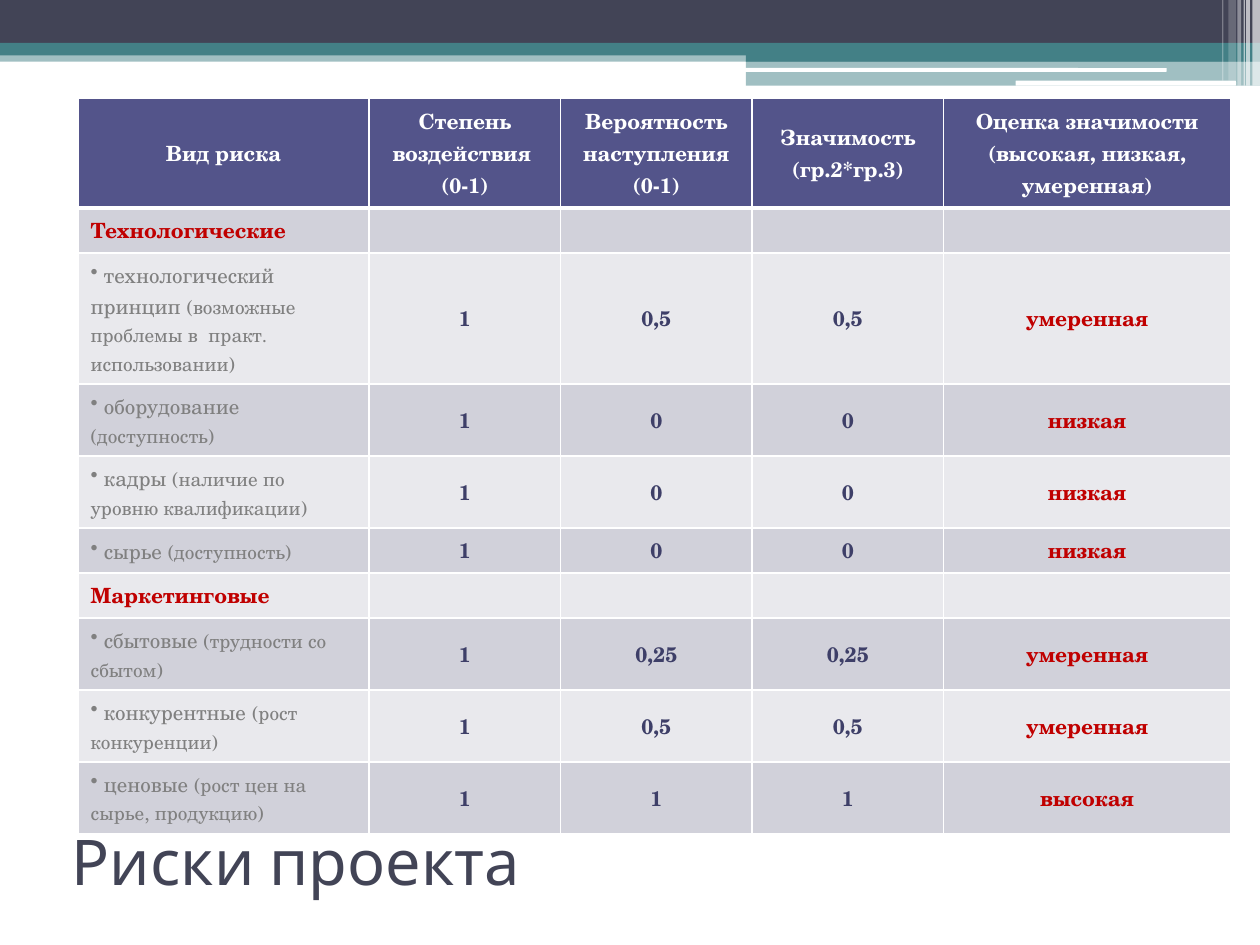
from lxml.etree import SubElement
from pptx import Presentation
from pptx.dml.color import RGBColor as Color
from pptx.enum.shapes import MSO_SHAPE as Preset
from pptx.enum.text import MSO_ANCHOR as Anchor, PP_ALIGN as Align
from pptx.oxml import parse_xml
from pptx.oxml.ns import nsdecls, qn
from pptx.util import Inches, Pt

COLORS = {
    "dark": "424456", "teal": "438086", "white": "FFFFFF", "header": "53548A",
    "odd": "D1D1DA", "even": "E9E9ED", "red": "C00000", "gray": "808080", "number": "3E3F68",
}
TITLE_FONT, TABLE_FONT = "Karla", "TeX Gyre Schola"

BANDS = [
    (0, 0.4, 10, 0.09, "teal", 50),
    (0, 0, 10, 0.34, "dark", 100),
    (0, 0.34, 10, 0.1, "teal", 100),
    (5.92, 0.39, 4.08, 0.1, "teal", 100),
    (5.92, 0.48, 4.08, 0.2, "teal", 50),
]
LINES = [(5.91, 0.54, 3.35, 0.03), (8.06, 0.64, 1.75, 0.04)]
STRIPES = [
    (9.94, 0.06, 0.68, 65), (9.89, 0.03, 0.68, 65), (9.87, 0.01, 0.68, 60),
    (9.82, 0.03, 0.68, 40), (9.75, 0.06, 0.64, 20), (9.7, 0.01, 0.64, 30),
]

COLUMN_WIDTHS = [2.31, 1.52, 1.52, 1.52, 2.28]
HEADERS = [
    ["Вид риска"],
    ["Степень воздействия ", "(0-1)"],
    ["Вероятность наступления (0-1)"],
    ["Значимость (гр.2*гр.3)"],
    ["Оценка значимости (высокая, низкая, умеренная)"],
]
HEADER_HEIGHT, GROUP_HEIGHT = 0.61, 0.35
RISKS = [
    (GROUP_HEIGHT, "Технологические"),
    (0.76, " технологический принцип ", "(возможные проблемы в  практ. использовании)",
     "1", "0,5", "0,5", "умеренная"),
    (0.42, " оборудование ", "(доступность)", "1", "0", "0", "низкая"),
    (0.42, " кадры ", "(наличие по уровню квалификации)", "1", "0", "0", "низкая"),
    (0.35, " сырье ", "(доступность)", "1", "0", "0", "низкая"),
    (GROUP_HEIGHT, "Маркетинговые"),
    (0.42, " сбытовые ", "(трудности со сбытом)", "1", "0,25", "0,25", "умеренная"),
    (0.42, " конкурентные ", "(рост конкуренции)", "1", "0,5", "0,5", "умеренная"),
    (0.42, " ценовые ", "(рост цен на сырье, продукцию)", "1", "1", "1", "высокая"),
]


def add_text(paragraph, text, font=TABLE_FONT, size=12, color="white", bold=True, align=Align.LEFT):
    paragraph.alignment = align
    run = paragraph.add_run()
    run.text = text
    run.font.name = font
    run.font.size = Pt(size)
    run.font.bold = bold
    run.font.color.rgb = Color.from_string(COLORS[color])


def add_block(slide, left, top, width, height, color, opacity=100, preset=Preset.RECTANGLE):
    shape = slide.shapes.add_shape(preset, Inches(left), Inches(top), Inches(width), Inches(height))
    shape.shadow.inherit = False
    shape.line.fill.background()
    shape.fill.solid()
    shape.fill.fore_color.rgb = Color.from_string(COLORS[color])
    if opacity < 100:
        fill_color = shape.fill._xPr.find(qn("a:solidFill"))[0]
        SubElement(fill_color, qn("a:alpha")).set("val", str(opacity * 1000))


def add_decoration(slide):
    for band in BANDS:
        add_block(slide, *band)
    for line in LINES:
        add_block(slide, *line, "white", preset=Preset.ROUNDED_RECTANGLE)
    for left, width, height, opacity in STRIPES:
        add_block(slide, left, 0, width, height, "white", opacity)


def add_title(slide, text):
    title = slide.shapes.title
    title.left, title.top, title.width, title.height = map(Inches, (0.47, 6.48, 8.95, 0.7))
    title.text_frame.vertical_anchor = Anchor.MIDDLE
    add_text(title.text_frame.paragraphs[0], text, font=TITLE_FONT, size=36, color="dark", bold=False)


def style_cell(cell, color, top=1, bottom=1):
    cell.vertical_anchor = Anchor.MIDDLE
    cell.fill.solid()
    cell.fill.fore_color.rgb = Color.from_string(COLORS[color])
    properties = cell._tc.get_or_add_tcPr()
    for index, (side, width) in enumerate((("L", 1), ("R", 1), ("T", top), ("B", bottom))):
        properties.insert(index, parse_xml(
            f'<a:ln{side} {nsdecls("a")} w="{Pt(width)}"><a:solidFill>'
            f'<a:srgbClr val="{COLORS["white"]}"/></a:solidFill></a:ln{side}>'))


def add_bullet(paragraph):
    properties = paragraph._p.get_or_add_pPr()
    properties.set("marL", "0")
    properties.set("indent", "0")
    SubElement(properties, qn("a:buChar")).set("char", "•")


def fill_header(table):
    for column, lines in enumerate(HEADERS):
        cell = table.cell(0, column)
        style_cell(cell, "header", bottom=3)
        for index, line in enumerate(lines):
            frame = cell.text_frame
            paragraph = frame.add_paragraph() if index else frame.paragraphs[0]
            add_text(paragraph, line, align=Align.CENTER)


def fill_risk(paragraphs, name, detail=None, *values):
    if detail is None:
        add_text(paragraphs[0], name, color="red")
        for paragraph in paragraphs[1:]:
            paragraph._p.get_or_add_endParaRPr().set("sz", "1200")
        return
    add_bullet(paragraphs[0])
    add_text(paragraphs[0], name, color="gray", bold=False)
    add_text(paragraphs[0], detail, size=11, color="gray", bold=False)
    for paragraph, value, color in zip(paragraphs[1:], values, ["number"] * 3 + ["red"]):
        add_text(paragraph, value, color=color, align=Align.CENTER)


def add_risk_table(slide):
    heights = [HEADER_HEIGHT] + [risk[0] for risk in RISKS]
    table = slide.shapes.add_table(
        len(heights), len(COLUMN_WIDTHS), Inches(0.62), Inches(0.78),
        Inches(sum(COLUMN_WIDTHS)), Inches(sum(heights))).table
    table.horz_banding = False
    for column, width in zip(table.columns, COLUMN_WIDTHS):
        column.width = Inches(width)
    for row, height in zip(table.rows, heights):
        row.height = Inches(height)
    fill_header(table)
    for index, (_, *content) in enumerate(RISKS, start=1):
        cells = list(table.rows[index].cells)
        for cell in cells:
            style_cell(cell, "odd" if index % 2 else "even", top=3 if index == 1 else 1)
        fill_risk([cell.text_frame.paragraphs[0] for cell in cells], *content)


def main():
    presentation = Presentation()
    presentation.slide_width, presentation.slide_height = Inches(10), Inches(7.5)
    slide = presentation.slides.add_slide(presentation.slide_layouts[5])
    add_decoration(slide)
    add_title(slide, "Риски проекта")
    add_risk_table(slide)
    presentation.save("out.pptx")


if __name__ == "__main__":
    main()
